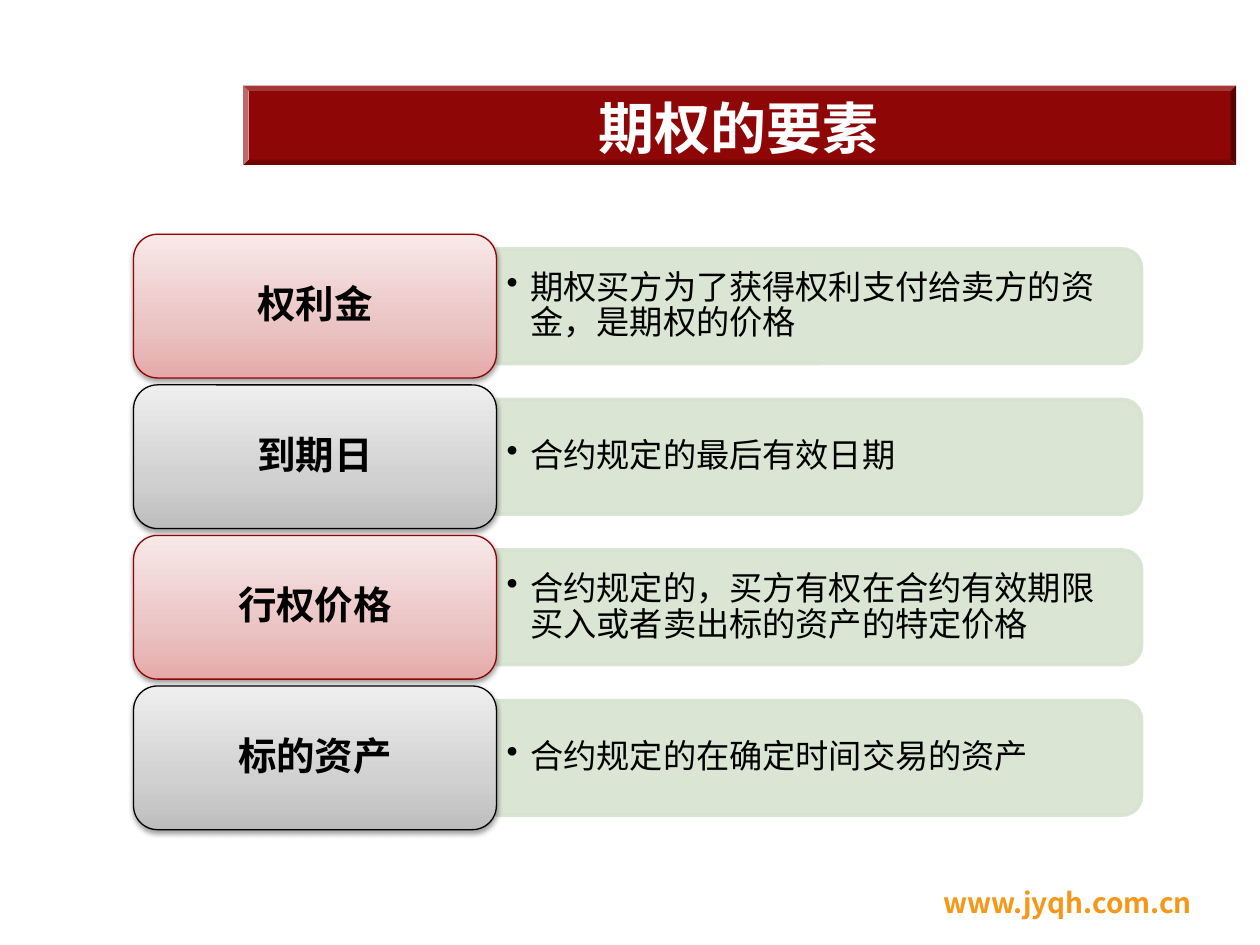
from copy import deepcopy
from dataclasses import dataclass

from lxml import etree
from pptx import Presentation
from pptx import util as u
from pptx.dml.color import RGBColor
from pptx.enum import shapes, text
from pptx.oxml.ns import qn


@dataclass(frozen=True)
class Theme:
    banner: str = "8E0606"
    white: str = "FFFFFF"
    ink: str = "000000"
    web: str = "F59719"
    detail: str = "D6E3CF"
    red: tuple = ("8E0303", ("E5A9A9", "EBC3C3", "F8E8E8"))
    grey: tuple = ("000000", ("BDBDBD", "D1D1D1", "EEEEEE"))
    font: str = "Noto Sans CJK SC"
    label_font: str = "DejaVu Sans"
    title_size: int = 32
    label_size: int = 22
    detail_size: int = 19
    web_size: int = 16


T = Theme()
TOP, PITCH = 1.86, 1.195
LABEL_X, LABEL_W, LABEL_H = 1.06, 2.88, 1.14
DETAIL_W, DETAIL_H, DETAIL_TEXT_H = 5.12, 0.91, 0.82

ELEMENTS = [
    ("权利金", "期权买方为了获得权利支付给卖方的资金，是期权的价格"),
    ("到期日", "合约规定的最后有效日期"),
    ("行权价格", "合约规定的，买方有权在合约有效期限买入或者卖出标的资产的特定价格"),
    ("标的资产", "合约规定的在确定时间交易的资产"),
]


def inches(*values):
    return [u.Inches(v) for v in values]


def rgb(color):
    return RGBColor.from_string(color)


def add_xml(parent, tag, **attrs):
    return etree.SubElement(parent, qn(tag), attrs)


def write(tf, words, size, color, align, spacing=None, bold=False,
          font=T.font, inset=(0.1, 0.05), anchor=text.MSO_ANCHOR.MIDDLE):
    tf.word_wrap = True
    tf.auto_size = text.MSO_AUTO_SIZE.NONE
    tf.vertical_anchor = anchor
    tf.margin_left = tf.margin_right = u.Inches(inset[0])
    tf.margin_top = tf.margin_bottom = u.Inches(inset[1])
    p = tf.paragraphs[0]
    p.text = words
    p.alignment = align
    p.line_spacing = spacing
    r = p.runs[0]
    r.font.name, r.font.size, r.font.bold = font, u.Pt(size), bold
    r.font.color.rgb = rgb(color)
    add_xml(r.font._element, "a:ea", typeface=T.font)
    return p


def add_box(s, kind, at, fill=None, line=None, width=0.75):
    sp = s.shapes.add_shape(kind, *inches(*at))
    sp.shadow.inherit = False
    if fill:
        sp.fill.solid()
        sp.fill.fore_color.rgb = rgb(fill)
    if line:
        sp.line.color.rgb = rgb(line)
        sp.line.width = u.Pt(width)
    else:
        sp.line.fill.background()
    return sp


def shade_upwards(sp, colors):
    """Three-stop gradient that runs from the bottom edge to the top."""
    sp.fill.gradient()
    sp.fill.gradient_angle = 90
    stops = sp.element.spPr.find(".//" + qn("a:gsLst"))
    stops.append(deepcopy(stops[0]))
    for stop, color, position in zip(sp.fill.gradient_stops, colors, (0, 0.35, 1)):
        stop.color.rgb = rgb(color)
        stop.position = position


def cast_shadow(sp):
    effects = sp.element.spPr.find(qn("a:effectLst"))
    shadow = add_xml(effects, "a:outerShdw", blurRad="40000", dist="20000",
                     dir="5400000", rotWithShape="0")
    color = add_xml(shadow, "a:srgbClr", val=T.ink)
    add_xml(color, "a:alpha", val="38000")


def add_title(s, words):
    title = s.shapes.title
    title.left, title.top, title.width, title.height = inches(2.03, 0.62, 7.66, 0.67)
    write(title.text_frame, words, T.title_size, T.white,
          text.PP_ALIGN.CENTER, 1.2, bold=True)
    banner = add_box(s, shapes.MSO_SHAPE.BEVEL, (1.93, 0.68, 7.88, 0.63), T.banner)
    banner.adjustments[0] = 0.068
    title.element.addprevious(banner.element)


def add_detail(s, middle, words):
    """Bar rounded on its right side, with one bulleted paragraph on it."""
    left = LABEL_X + LABEL_W
    bar = add_box(s, shapes.MSO_SHAPE.ROUND_2_SAME_RECTANGLE,
                  (left + (DETAIL_W - DETAIL_H) / 2, middle - DETAIL_W / 2,
                   DETAIL_H, DETAIL_W), T.detail, T.detail, 2)
    bar.rotation = 90
    for color in bar.element.spPr.iter(qn("a:srgbClr")):
        add_xml(color, "a:alpha", val="90000")

    tb = s.shapes.add_textbox(*inches(left, middle - DETAIL_TEXT_H / 2,
                                      5.08, DETAIL_TEXT_H))
    p = write(tb.text_frame, words, T.detail_size, T.ink, text.PP_ALIGN.LEFT,
              0.9, inset=(0.08, 0.04))
    p.level = 1
    pPr = p._p.get_or_add_pPr()
    indent = u.Inches(0.19)
    pPr.set("marL", str(indent))
    pPr.set("indent", str(-indent))
    add_xml(pPr, "a:buChar", char="•")


def add_label(s, middle, words, line, shades):
    sp = add_box(s, shapes.MSO_SHAPE.ROUNDED_RECTANGLE,
                 (LABEL_X, middle - LABEL_H / 2, LABEL_W, LABEL_H), line=line)
    shade_upwards(sp, shades)
    cast_shadow(sp)
    write(sp.text_frame, words, T.label_size, T.ink, text.PP_ALIGN.CENTER,
          0.9, bold=True, font=T.label_font, inset=(0.09, 0.05))


def add_web_address(s, words):
    tb = s.shapes.add_textbox(*inches(6.81, 6.98, 2.75, 0.39))
    write(tb.text_frame, words, T.web_size, T.web, text.PP_ALIGN.RIGHT,
          bold=True, anchor=text.MSO_ANCHOR.TOP)


def main():
    prs = Presentation()
    prs.slide_width, prs.slide_height = inches(10, 7.5)
    s = prs.slides.add_slide(prs.slide_layouts[5])
    add_title(s, "期权的要素")
    add_web_address(s, "www.jyqh.com.cn")
    for row, (label, detail) in enumerate(ELEMENTS):
        middle = TOP + row * PITCH + LABEL_H / 2
        add_detail(s, middle, detail)
        add_label(s, middle, label, *(T.grey if row % 2 else T.red))
    prs.save("out.pptx")


if __name__ == "__main__":
    main()
